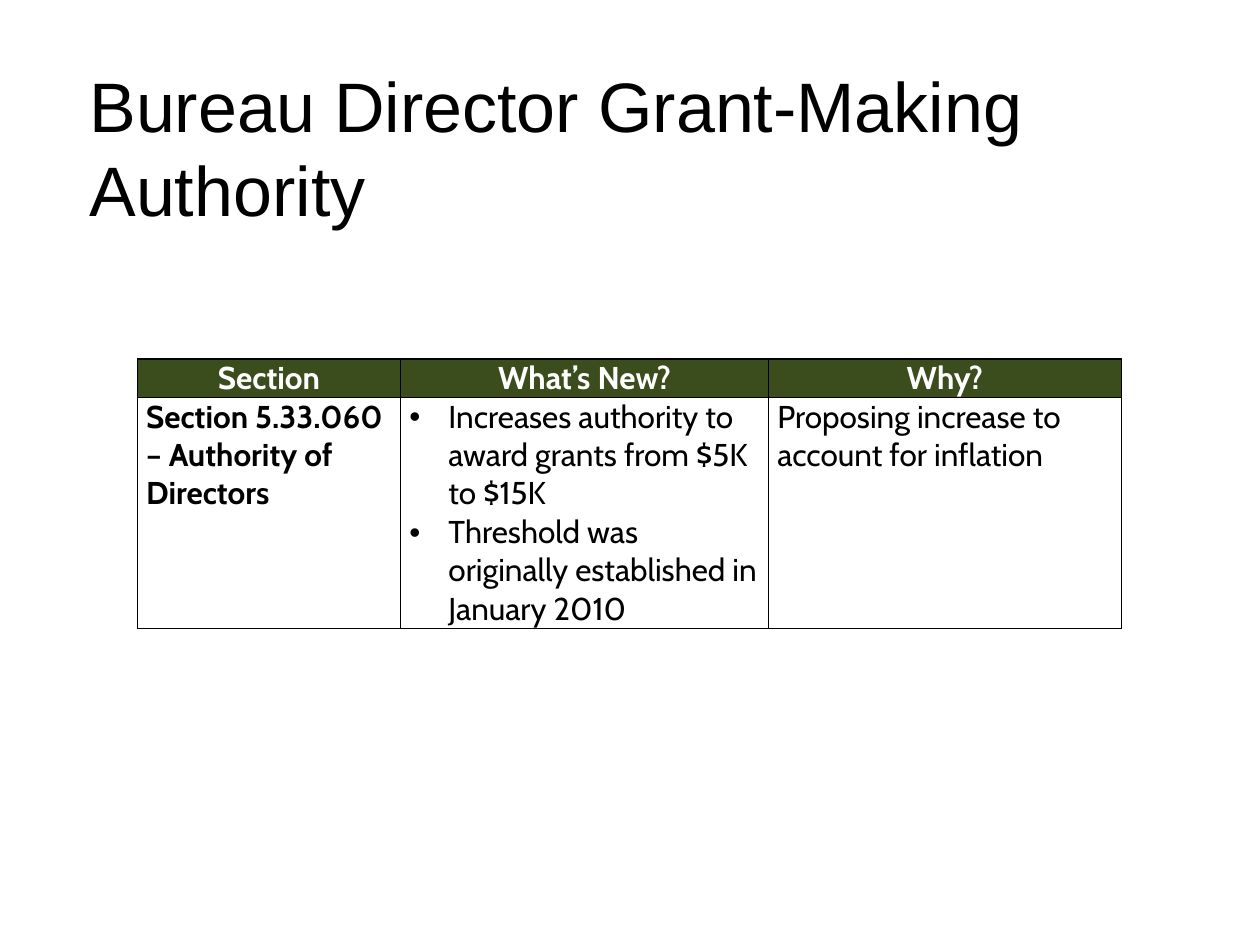
"""Build the slide on bureau director grant-making authority."""
from dataclasses import dataclass

from lxml import etree
from pptx import Presentation
from pptx.dml.color import RGBColor
from pptx.enum import text
from pptx.oxml import ns
from pptx.util import Inches, Pt

BLACK, WHITE, GREEN = "000000", "FFFFFF", "3B4D1C"
ROW_HEIGHTS = (0.3, 1.8)


@dataclass(frozen=True)
class Column:
    """One table column with its heading and body."""
    width: float
    heading: str
    lines: tuple[str, ...]
    bold: bool = False
    bulleted: bool = False


COLUMNS = (
    Column(2.09, "Section", ("Section 5.33.060 – Authority of Directors",), bold=True),
    Column(2.92, "What’s New?", (
        "Increases authority to award grants from $5K to $15K",
        "Threshold was originally established in January 2010",
    ), bulleted=True),
    Column(2.8, "Why?", ("Proposing increase to account for inflation",)),
)


def rgb(color: str) -> RGBColor:
    """Turn a hex string into a colour."""
    return RGBColor.from_string(color)


def set_attrs(obj, **values) -> None:
    """Set several attributes on one object."""
    for name, value in values.items():
        setattr(obj, name, value)


def set_font(r, color: str, **values) -> None:
    """Format a run."""
    set_attrs(r.font, **values)
    r.font.color.rgb = rgb(color)


def add_borders(cell) -> None:
    """Draw a thin black line on each side of a cell."""
    pr = cell._tc.get_or_add_tcPr()
    for i, side in enumerate(("lnL", "lnR", "lnT", "lnB")):
        ln = etree.Element(ns.qn(f"a:{side}"), w=str(Pt(1)))
        fill = etree.SubElement(ln, ns.qn("a:solidFill"))
        etree.SubElement(fill, ns.qn("a:srgbClr"), val=BLACK)
        pr.insert(i, ln)


def add_bullet(p) -> None:
    """Give a paragraph a hanging bullet."""
    pr = p._p.get_or_add_pPr()
    pr.set("marL", str(Inches(0.31)))
    pr.set("indent", str(-Inches(0.31)))
    etree.SubElement(pr, ns.qn("a:buFont"), typeface="Arial")
    etree.SubElement(pr, ns.qn("a:buChar"), char="•")


def fill_cell(cell, lines: tuple[str, ...], color: str, bold: bool,
              align=text.PP_ALIGN.LEFT, bulleted: bool = False) -> None:
    """Write and format the paragraphs of a cell."""
    set_attrs(cell, margin_left=Inches(0.07), margin_right=Inches(0.07),
              margin_top=0, margin_bottom=0)
    tf = cell.text_frame
    for i, line in enumerate(lines):
        p = tf.add_paragraph() if i else tf.paragraphs[0]
        if bulleted:
            add_bullet(p)
        p.alignment = align
        r = p.add_run()
        r.text = line
        set_font(r, color, name="Cabin", size=Pt(18), bold=bold)


def add_title(s, title: str) -> None:
    """Place and format the slide title."""
    sp = s.shapes.title
    set_attrs(sp, left=Inches(0.61), top=Inches(0.45),
              width=Inches(8.29), height=Inches(1.09))
    tf = sp.text_frame
    set_attrs(tf, word_wrap=True, auto_size=text.MSO_AUTO_SIZE.NONE,
              vertical_anchor=text.MSO_ANCHOR.TOP)
    p = tf.paragraphs[0]
    set_attrs(p, alignment=text.PP_ALIGN.LEFT, line_spacing=Pt(48))
    r = p.add_run()
    r.text = title
    set_font(r, BLACK, name="Arial", size=Pt(40))


def add_grid(s, columns: tuple[Column, ...]) -> None:
    """Draw the table of changes."""
    width = sum(c.width for c in columns)
    table = s.shapes.add_table(len(ROW_HEIGHTS), len(columns), Inches(1.09), Inches(2.85),
                               Inches(width), Inches(sum(ROW_HEIGHTS))).table
    for row, height in zip(table.rows, ROW_HEIGHTS):
        row.height = Inches(height)
    for i, column in enumerate(columns):
        table.columns[i].width = Inches(column.width)
        head, body = table.cell(0, i), table.cell(1, i)
        head.fill.solid()
        head.fill.fore_color.rgb = rgb(GREEN)
        body.fill.background()
        fill_cell(head, (column.heading,), WHITE, True, text.PP_ALIGN.CENTER)
        fill_cell(body, column.lines, BLACK, column.bold, bulleted=column.bulleted)
        for cell in (head, body):
            add_borders(cell)


def main() -> None:
    """Build and save the slide."""
    prs = Presentation()
    set_attrs(prs, slide_width=Inches(10), slide_height=Inches(7.5))
    s = prs.slides.add_slide(prs.slide_layouts[5])
    add_title(s, "Bureau Director Grant-Making Authority")
    add_grid(s, COLUMNS)
    prs.save("out.pptx")


if __name__ == "__main__":
    main()
